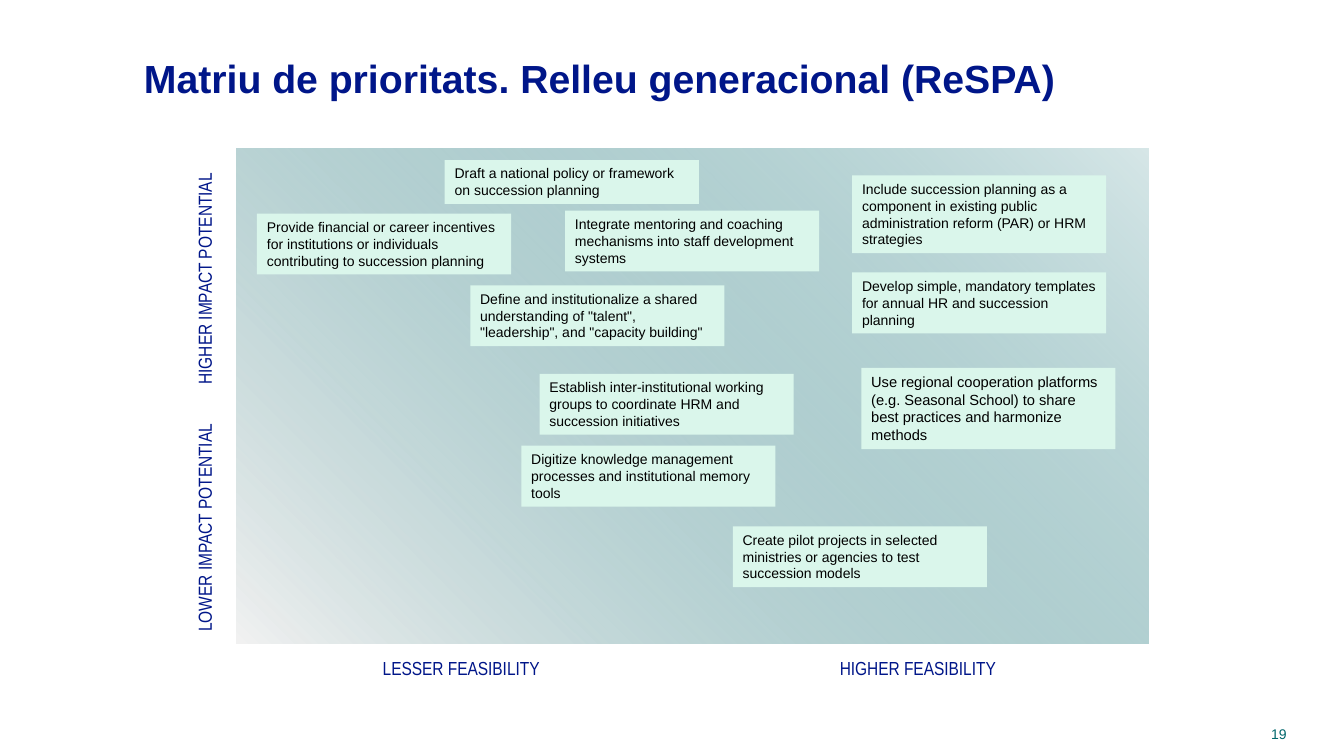
from collections import namedtuple

from lxml.etree import SubElement
from pptx import Presentation
from pptx.dml.color import RGBColor
from pptx.enum.shapes import MSO_SHAPE
from pptx.enum.text import MSO_ANCHOR, PP_ALIGN
from pptx.oxml.ns import qn
from pptx.util import Inches, Pt

NAVY = RGBColor(0x00, 0x16, 0x89)
TEAL = RGBColor(0x00, 0x67, 0x6C)
PALE_GREY = RGBColor(0xF2, 0xF2, 0xF2)
MINT = RGBColor(0xDA, 0xF6, 0xEB)
BLACK = RGBColor(0x00, 0x00, 0x00)

Box = namedtuple("Box", "left top width height")
TITLE_BOX = Box(1.33, 0.46, 11.36, 0.62)
MATRIX_BOX = Box(2.35, 1.47, 9.04, 4.91)
NUMBER_BOX = Box(12.02, 7.14, 0.84, 0.29)

CARD_WIDTH = 2.52
LABEL_HEIGHT = 0.33

# Left and top in percent of the matrix, number of lines, text size, wording
IDEAS = [
    (68.5, 44.4, 4, 10.5, "Use regional cooperation platforms (e.g. Seasonal School) "
     "to share best practices and harmonize methods"),
    (22.8, 2.4, 2, 10, "Draft a national policy or framework on succession planning"),
    (67.5, 5.5, 4, 10, "Include succession planning as a component in existing public "
     "administration reform (PAR) or HRM strategies"),
    (54.4, 76.4, 3, 10, "Create pilot projects in selected ministries or agencies "
     "to test succession models"),
    (25.6, 27.7, 3, 10, 'Define and institutionalize a shared understanding of "talent", '
     '"leadership", and "capacity building"'),
    (67.5, 25.1, 3, 10, "Develop simple, mandatory templates for annual HR and "
     "succession planning"),
    (33.2, 45.6, 3, 10, "Establish inter-institutional working groups to coordinate HRM "
     "and succession initiatives"),
    (36.0, 12.6, 3, 10, "Integrate mentoring and coaching mechanisms into staff "
     "development systems"),
    (31.2, 60.1, 3, 10, "Digitize knowledge management processes and institutional "
     "memory tools"),
    (2.2, 13.2, 3, 10, "Provide financial or career incentives for institutions or "
     "individuals contributing to succession planning"),
]

# Centre along the axis in percent of the matrix, label length, wording
FEASIBILITY = [(24.6, 4.51, "LESSER FEASIBILITY"), (74.7, 4.51, "HIGHER FEASIBILITY")]
IMPACT = [(76.7, 2.3, "LOWER IMPACT POTENTIAL"), (26.4, 2.75, "HIGHER IMPACT POTENTIAL")]


def write(shape, text, size, color, font="Arial", bold=False,
          align=PP_ALIGN.LEFT, anchor=MSO_ANCHOR.TOP, wrap=True):
    frame = shape.text_frame
    frame.text = text
    frame.word_wrap = wrap
    frame.vertical_anchor = anchor
    para = frame.paragraphs[0]
    para.alignment = align
    span = para.runs[0].font
    span.name, span.size, span.bold = font, Pt(size), bold
    span.color.rgb = color


def add_text(slide, box, text, size, color, **style):
    shape = slide.shapes.add_textbox(*map(Inches, box))
    write(shape, text, size, color, **style)
    return shape


def add_rectangle(slide, box):
    shape = slide.shapes.add_shape(MSO_SHAPE.RECTANGLE, *map(Inches, box))
    shape.shadow.inherit = False
    shape.line.fill.background()
    return shape


def add_background(slide, box):
    """Diagonal gradient that fades to a translucent teal at the top right."""
    panel = add_rectangle(slide, box)
    panel.fill.gradient()
    panel.fill.gradient_angle = 45
    for stop, color, position in zip(panel.fill.gradient_stops, (PALE_GREY, TEAL), (0, 1)):
        stop.color.rgb = color
        stop.position = position
    teal_stop = list(panel.element.iter(qn("a:srgbClr")))[-1]
    SubElement(teal_stop, qn("a:alpha")).set("val", "16000")


def add_axis_label(slide, center_x, center_y, length, text, rotation=0):
    box = Box(center_x - length / 2, center_y - LABEL_HEIGHT / 2, length, LABEL_HEIGHT)
    label = add_text(slide, box, text, 13.5, NAVY, font="Arial Narrow",
                     align=PP_ALIGN.CENTER, wrap=False)
    label.rotation = rotation


def add_axes(slide, box):
    for percent, length, text in FEASIBILITY:
        add_axis_label(slide, box.left + box.width * percent / 100,
                       box.top + box.height + 0.25, length, text)
    for percent, length, text in IMPACT:
        add_axis_label(slide, box.left - 0.32,
                       box.top + box.height * percent / 100, length, text, 270)


def add_ideas(slide, box):
    for left, top, lines, size, text in IDEAS:
        height = 0.1 + lines * size * 1.21 / 72
        card = add_rectangle(slide, Box(box.left + box.width * left / 100,
                                        box.top + box.height * top / 100,
                                        CARD_WIDTH, height))
        card.fill.solid()
        card.fill.fore_color.rgb = MINT
        write(card, text, size, BLACK)


def add_matrix(slide, box):
    add_background(slide, box)
    add_axes(slide, box)
    add_ideas(slide, box)


def main():
    deck = Presentation()
    deck.slide_width, deck.slide_height = Inches(13.33), Inches(7.5)
    slide = deck.slides.add_slide(deck.slide_layouts[6])
    add_text(slide, NUMBER_BOX, "19", 10, TEAL, align=PP_ALIGN.RIGHT, anchor=MSO_ANCHOR.MIDDLE)
    add_text(slide, TITLE_BOX, "Matriu de prioritats. Relleu generacional (ReSPA)",
             28, NAVY, bold=True, anchor=MSO_ANCHOR.MIDDLE)
    add_matrix(slide, MATRIX_BOX)
    deck.save("out.pptx")


if __name__ == "__main__":
    main()
